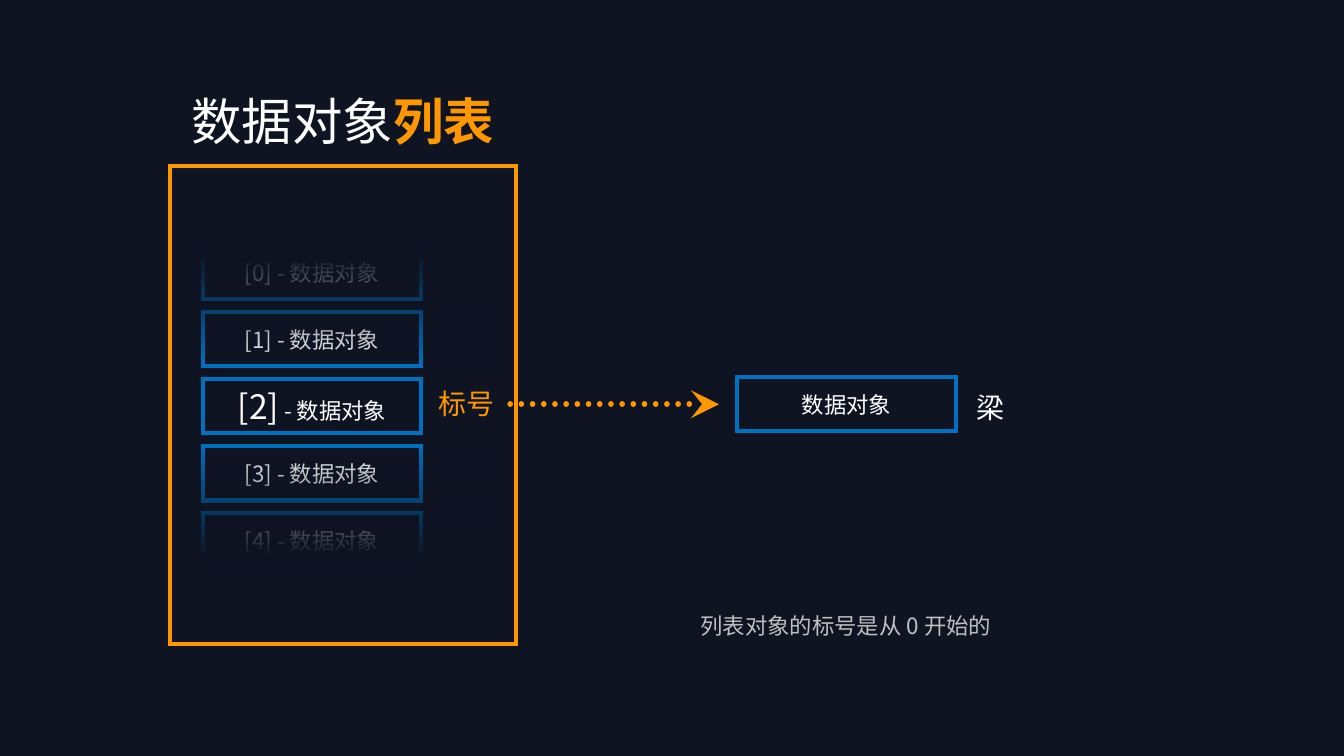
from dataclasses import dataclass

from lxml import etree
from pptx import Presentation
from pptx import util as u
from pptx.dml.color import RGBColor
from pptx.enum import dml, shapes, text
from pptx.oxml.ns import qn


@dataclass(frozen=True)
class Theme:
    background: str = "0F1423"
    blue: str = "0070C0"
    orange: str = "FF9800"
    white: str = "FFFFFF"
    grey: str = "BFBFBF"
    font: str = "Noto Sans CJK SC"
    font_alternate: str = "Noto Sans CJK JP"
    title: int = 36
    index: int = 24
    label: int = 20
    body: int = 16
    outline: int = 3
    dots: int = 4


THEME = Theme()
ITEM = "数据对象"
ITEM_WIDTH, ITEM_HEIGHT = 2.17, 0.54


def rgb(value):
    return RGBColor.from_string(value)


def format_run(run, size, color, font=THEME.font, bold=False):
    run.font.size = u.Pt(size)
    run.font.bold = bold
    run.font.name = font
    run.font.color.rgb = rgb(color)
    east_asian = etree.SubElement(run.font._element, qn("a:ea"))
    east_asian.set("typeface", font)


def add_run(paragraph, words, size, color, font=THEME.font, bold=False):
    run = paragraph.add_run()
    run.text = words
    format_run(run, size, color, font, bold)


def add_rectangle(slide, left, top, width, height):
    shape = slide.shapes.add_shape(
        shapes.MSO_SHAPE.RECTANGLE,
        u.Inches(left), u.Inches(top), u.Inches(width), u.Inches(height))
    shape.shadow.inherit = False
    return shape


def add_outline(slide, left, top, width, height, color):
    shape = add_rectangle(slide, left, top, width, height)
    shape.fill.background()
    shape.line.color.rgb = rgb(color)
    shape.line.width = u.Pt(THEME.outline)
    miter = etree.SubElement(shape.line._get_or_add_ln(), qn("a:miter"))
    miter.set("lim", "800000")
    return shape


def add_item(slide, left, top, parts):
    shape = add_outline(slide, left, top, ITEM_WIDTH, ITEM_HEIGHT, THEME.blue)
    shape.text_frame.vertical_anchor = text.MSO_ANCHOR.MIDDLE
    paragraph = shape.text_frame.paragraphs[0]
    paragraph.alignment = text.PP_ALIGN.CENTER
    for words, size in parts:
        add_run(paragraph, words, size, THEME.white)


def add_veil(slide, left, top, width, height, rotation):
    shape = add_rectangle(slide, left, top, width, height)
    shape.rotation = rotation
    shape.line.fill.background()
    shape.fill.gradient()
    shape.fill.gradient_angle = 270
    for stop, position in zip(shape.fill.gradient_stops, (0.38, 1)):
        stop.position = position
        stop.color.rgb = rgb(THEME.background)
    colors = shape._element.spPr.findall(".//" + qn("a:srgbClr"))
    etree.SubElement(colors[-1], qn("a:alpha")).set("val", "0")


def add_label(slide, left, top, width, height, words, size, color,
              font=THEME.font, wrap=False):
    box = slide.shapes.add_textbox(
        u.Inches(left), u.Inches(top), u.Inches(width), u.Inches(height))
    box.text_frame.word_wrap = wrap
    box.text_frame.auto_size = text.MSO_AUTO_SIZE.SHAPE_TO_FIT_TEXT
    add_run(box.text_frame.paragraphs[0], words, size, color, font)


def place_title(slide, left, top, width, height):
    title = slide.shapes.title
    title.left, title.top = u.Inches(left), u.Inches(top)
    title.width, title.height = u.Inches(width), u.Inches(height)
    frame = title.text_frame
    frame.word_wrap = False
    frame.auto_size = text.MSO_AUTO_SIZE.NONE
    frame.vertical_anchor = text.MSO_ANCHOR.TOP
    paragraph = frame.paragraphs[0]
    paragraph.alignment = text.PP_ALIGN.CENTER
    paragraph.line_spacing = 1.0
    paragraph.space_before = u.Pt(0)
    add_run(paragraph, ITEM, THEME.title, THEME.white)
    add_run(paragraph, "列表", THEME.title, THEME.orange, bold=True)


def build_list(slide, left, top, width, height):
    pitch, selected = 0.665, 2
    for index in range(5):
        size = THEME.index if index == selected else THEME.body
        add_item(slide, left + 0.32, top + 0.78 + index * pitch,
                 [(f"[{index}]", size), (f" - {ITEM}", THEME.body)])
    add_outline(slide, left, top, width, height, THEME.orange)
    veil_height, inset = 1.82, 0.16
    for veil_top, rotation in ((top + inset, 0),
                               (top + height - inset - veil_height, 180)):
        add_veil(slide, left + 0.24, veil_top, 3.08, veil_height, rotation)


def build_lookup(slide, left, top):
    add_label(slide, left, top + 0.05, 0.76, 0.44, "标号", THEME.label, THEME.orange)
    arrow_top = u.Inches(top + ITEM_HEIGHT / 2)
    arrow = slide.shapes.add_connector(
        shapes.MSO_CONNECTOR.STRAIGHT,
        u.Inches(left + 0.81), arrow_top, u.Inches(left + 2.88), arrow_top)
    arrow.line.color.rgb = rgb(THEME.orange)
    arrow.line.width = u.Pt(THEME.dots)
    arrow.line.dash_style = dml.MSO_LINE.ROUND_DOT
    outline = arrow.line._get_or_add_ln()
    outline.set("cap", "rnd")
    arrowhead = etree.SubElement(outline, qn("a:tailEnd"))
    for name, value in (("type", "stealth"), ("w", "lg"), ("len", "lg")):
        arrowhead.set(name, value)
    etree.SubElement(arrow._element.spPr, qn("a:effectLst"))
    add_item(slide, left + 3.06, top, [(ITEM, THEME.body)])
    add_label(slide, left + 5.34, top + 0.09, 0.48, 0.44, "梁",
              THEME.label, THEME.white, THEME.font_alternate)


def build_slide(presentation):
    slide = presentation.slides.add_slide(presentation.slide_layouts[5])
    slide.background.fill.solid()
    slide.background.fill.fore_color.rgb = rgb(THEME.background)
    place_title(slide, 1.6, 0.84, 3.6, 0.71)
    build_list(slide, 1.69, 1.65, 3.43, 4.74)
    build_lookup(slide, 4.25, 3.74)
    add_label(slide, 6.85, 6.02, 3.1, 0.64, "列表对象的标号是从 0 开始的",
              THEME.body, THEME.grey, wrap=True)


def main():
    presentation = Presentation()
    presentation.slide_width = u.Inches(13.33)
    presentation.slide_height = u.Inches(7.5)
    build_slide(presentation)
    presentation.save("out.pptx")


if __name__ == "__main__":
    main()
